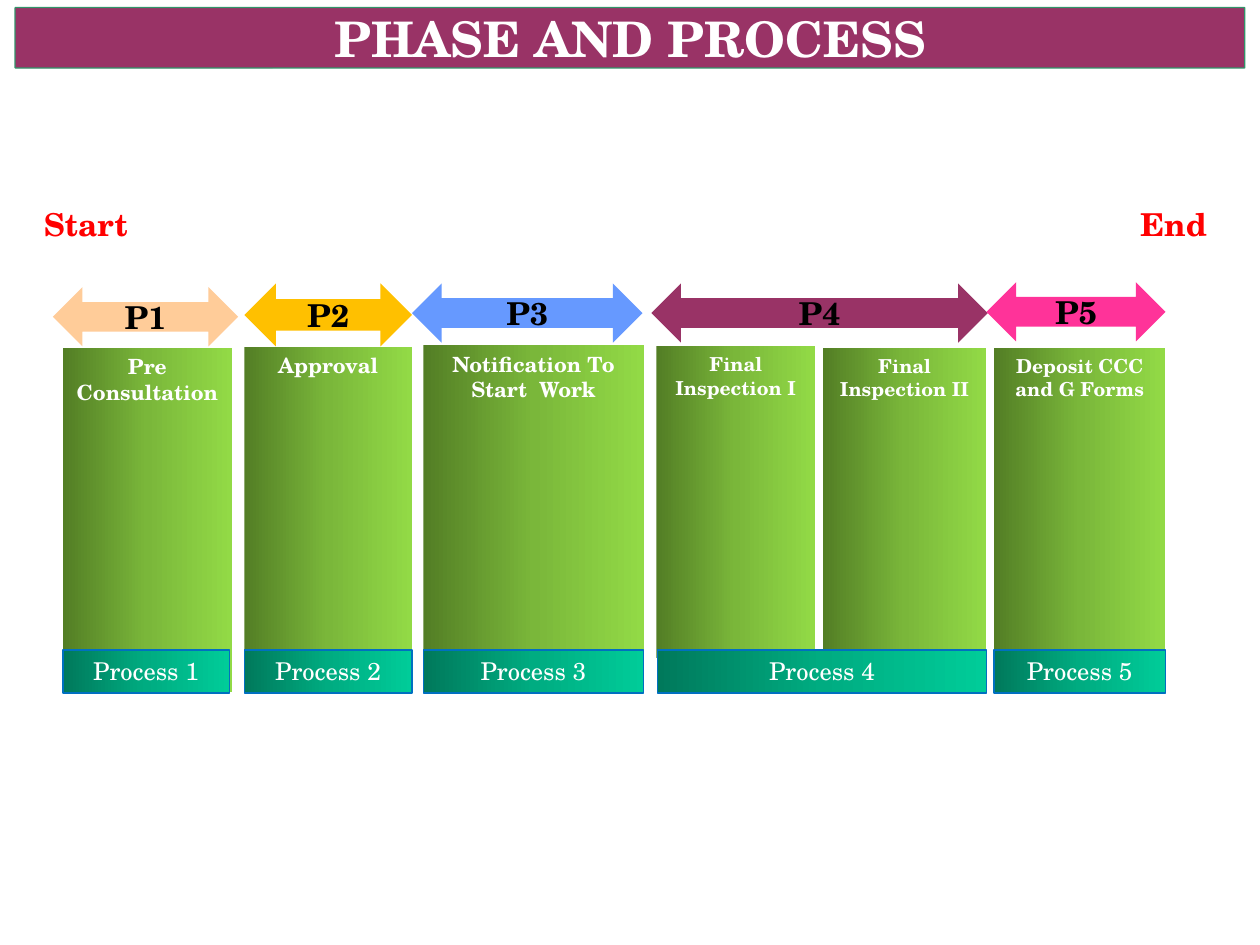
from copy import deepcopy
from dataclasses import dataclass

from pptx import Presentation
from pptx import util as u
from pptx.dml.color import RGBColor
from pptx.enum import shapes, text


@dataclass(frozen=True)
class Theme:
    font: str = "TeX Gyre Schola"
    white: str = "FFFFFF"
    black: str = "000000"
    red: str = "FF0000"
    plum: str = "993366"
    title_line: str = "32946A"
    bar_line: str = "0070C0"
    green: tuple = ("537E25", "7AB73A", "92DA46")
    teal: tuple = ("00795B", "00AC81", "00CC99")
    title_size: int = 28
    label_size: int = 18
    bar_size: int = 14


THEME = Theme()
BAR_TOP, BAR_HEIGHT = 5.16, 0.34

# Phase arrows: label, colour, left, top, width, height
ARROWS = [
    ("P1", "FFCC99", 0.42, 2.28, 1.47, 0.47),
    ("P2", "FFC000", 1.94, 2.25, 1.33, 0.5),
    ("P3", "6699FF", 3.27, 2.25, 1.83, 0.47),
    ("P4", THEME.plum, 5.17, 2.25, 2.67, 0.47),
    ("P5", "FF3399", 7.83, 2.24, 1.42, 0.47),
]

# Stage columns: label, text size, left, top, width, height
COLUMNS = [
    ("Pre Consultation", 12, 0.5, 2.76, 1.34, 2.73),
    ("Approval", 12, 1.94, 2.75, 1.33, 2.52),
    ("Notification To Start  Work", 12, 3.36, 2.74, 1.75, 2.52),
    ("Final Inspection I", 11, 5.21, 2.75, 1.26, 2.47),
    ("Final Inspection II", 11, 6.53, 2.76, 1.3, 2.6),
    ("Deposit CCC and G Forms", 11, 7.89, 2.76, 1.36, 2.47),
]

# Process bars: left, width
BARS = [(0.5, 1.32), (1.94, 1.33), (3.36, 1.75), (5.22, 2.61), (7.89, 1.36)]


def write(shape, words, *, size, color, bold=True,
          align=text.PP_ALIGN.CENTER, anchor=text.MSO_ANCHOR.TOP, wrap=True):
    """Put one formatted paragraph into a shape."""
    frame = shape.text_frame
    frame.word_wrap = wrap
    frame.vertical_anchor = anchor
    para = frame.paragraphs[0]
    para.alignment = align
    span = para.add_run()
    span.text = words
    span.font.name = THEME.font
    span.font.size = u.Pt(size)
    span.font.bold = bold
    span.font.color.rgb = RGBColor.from_string(color)


def fill_gradient(shape, colors):
    """Fill from left to right with three evenly spaced colours."""
    shape.fill.gradient()
    shape.fill.gradient_angle = 0
    stops = shape._element.spPr.gradFill.gsLst
    stops.append(deepcopy(stops[-1]))
    for index, (stop, color) in enumerate(zip(shape.fill.gradient_stops, colors)):
        stop.position = index / (len(colors) - 1)
        stop.color.rgb = RGBColor.from_string(color)


class PhasePage:
    def __init__(self, page, theme):
        self.page = page
        self.theme = theme

    def shape(self, kind, place, fill, line=None):
        shape = self.page.shapes.add_shape(kind, *map(u.Inches, place))
        shape.shadow.inherit = False
        if isinstance(fill, tuple):
            fill_gradient(shape, fill)
        else:
            shape.fill.solid()
            shape.fill.fore_color.rgb = RGBColor.from_string(fill)
        if line:
            shape.line.color.rgb = RGBColor.from_string(line)
            shape.line.width = u.Pt(0.75)
        else:
            shape.line.fill.background()
        return shape

    def title(self, words, *place):
        shape = self.shape(shapes.MSO_SHAPE.ROUNDED_RECTANGLE, place,
                           self.theme.plum, self.theme.title_line)
        shape.adjustments[0] = 0.01
        frame = shape.text_frame
        frame.margin_left = frame.margin_right = u.Inches(0.07)
        frame.margin_top = frame.margin_bottom = u.Inches(0.04)
        write(shape, words, size=self.theme.title_size, color=self.theme.white,
              anchor=text.MSO_ANCHOR.MIDDLE, wrap=False)

    def arrow(self, words, color, *place):
        shape = self.shape(shapes.MSO_SHAPE.LEFT_RIGHT_ARROW, place, color)
        write(shape, words, size=self.theme.label_size, color=self.theme.black,
              anchor=text.MSO_ANCHOR.MIDDLE)

    def column(self, words, size, *place):
        shape = self.shape(shapes.MSO_SHAPE.RECTANGLE, place, self.theme.green)
        write(shape, words, size=size, color=self.theme.white)

    def bar(self, words, left, width):
        place = (left, BAR_TOP, width, BAR_HEIGHT)
        shape = self.shape(shapes.MSO_SHAPE.RECTANGLE, place,
                           self.theme.teal, self.theme.bar_line)
        write(shape, words, size=self.theme.bar_size, color=self.theme.white,
              bold=False)

    def label(self, words, align, *place):
        box = self.page.shapes.add_textbox(*map(u.Inches, place))
        write(box, words, size=self.theme.label_size, color=self.theme.red,
              align=align)


def main():
    deck = Presentation()
    deck.slide_width, deck.slide_height = u.Inches(10), u.Inches(7.5)
    phases = PhasePage(deck.slides.add_slide(deck.slide_layouts[6]), THEME)

    # Heading and end points
    phases.title("PHASE AND PROCESS", 0.12, 0.06, 9.76, 0.48)
    phases.label("Start", text.PP_ALIGN.LEFT, 0.25, 1.58, 8.58, 0.4)
    phases.label("End", text.PP_ALIGN.CENTER, 8.83, 1.58, 0.97, 0.4)

    # Phases, their stages and the processes below
    for arrow in ARROWS:
        phases.arrow(*arrow)
    for column in COLUMNS:
        phases.column(*column)
    for number, (left, width) in enumerate(BARS, start=1):
        phases.bar(f"Process {number}", left, width)

    deck.save("out.pptx")


if __name__ == "__main__":
    main()
